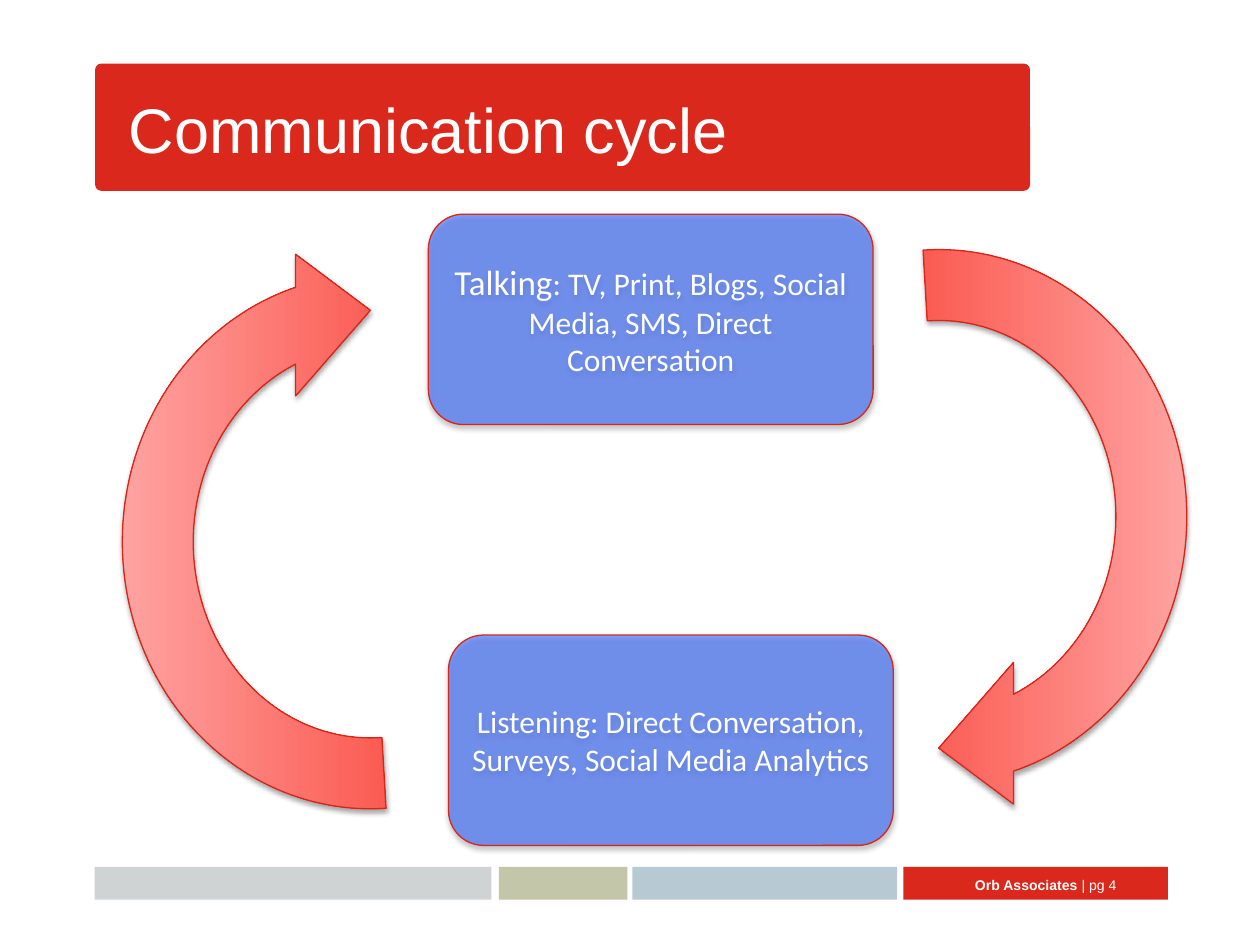
from lxml.etree import SubElement
from pptx import Presentation
from pptx.dml.color import RGBColor
from pptx.enum.shapes import MSO_SHAPE
from pptx.enum.text import MSO_ANCHOR, PP_ALIGN
from pptx.oxml.ns import qn
from pptx.util import Inches, Pt

COLORS = {
    "red": "DA291C", "outline": "DA2417", "grey": "D0D3D4", "olive": "C3C6A8",
    "sky": "B7C9D3", "blue": "3366FF", "deep": "F61100", "pale": "FFADAC",
    "white": "FFFFFF", "black": "000000",
}

# Content: text runs are (text, size, bold)
TITLE = [("Communication cycle", 36, False)]
FOOTER = [("Orb Associates ", 8, True), ("| pg 4", 8, False)]
STEPS = [  # left, top, runs
    (3.4, 1.7, [("Talking", 20, False),
                (": TV, Print, Blogs, Social Media, SMS, Direct Conversation", 18, False)]),
    (3.56, 5.04, [("Listening: Direct Conversation, Surveys, Social Media Analytics",
                   18, False)]),
]
ARROWS = [(5.05, 1.85, 90), (0.54, 2.05, 270)]  # left, top, rotation
FOOTER_BARS = [(0.75, 3.15, "grey"), (3.96, 1.02, "olive"),
               (5.02, 2.1, "sky"), (7.17, 2.1, "red")]  # left, width, colour

STEP_SIZE = (3.53, 1.67)
ARROW_SIZE = (4.8, 4.5)
ARROW_ADJ = (0.125, 11.423, 204.577, 105.983, 0.125)
BAR_TOP, BAR_HEIGHT = 6.88, 0.26


def rgb(name):
    return RGBColor.from_string(COLORS[name])


def write(shape, runs, font="Arial", color="white", align=PP_ALIGN.LEFT):
    tf = shape.text_frame
    tf.word_wrap = True
    tf.vertical_anchor = MSO_ANCHOR.MIDDLE
    p = tf.paragraphs[0]
    p.alignment = align
    for text, size, bold in runs:
        r = p.add_run()
        r.text = text
        r.font.name, r.font.size, r.font.bold = font, Pt(size), bold
        r.font.color.rgb = rgb(color)


def add_shape(s, kind, left, top, width, height, fill=None, line=None, adj=()):
    sp = s.shapes.add_shape(kind, *map(Inches, (left, top, width, height)))
    sp.shadow.inherit = False
    for i, value in enumerate(adj):
        sp.adjustments[i] = value
    if fill:
        sp.fill.solid()
        sp.fill.fore_color.rgb = rgb(fill)
    if line:
        sp.line.color.rgb = rgb(line)
        sp.line.width = Pt(0.75)
    else:
        sp.line.fill.background()
    return sp


def set_alpha(color_el, percent):
    SubElement(color_el, qn("a:alpha"), val=str(percent * 1000))


def add_shadow(sp):
    effects = sp.element.spPr.find(qn("a:effectLst"))
    shadow = SubElement(effects, qn("a:outerShdw"), blurRad=str(Pt(3.1)),
                        dist=str(Pt(1.8)), dir="5400000", rotWithShape="0")
    set_alpha(SubElement(shadow, qn("a:srgbClr"), val=COLORS["black"]), 35)


def main():
    prs = Presentation()
    prs.slide_width, prs.slide_height = Inches(10), Inches(7.5)
    s = prs.slides.add_slide(prs.slide_layouts[5])

    # Title on its red band
    title = s.shapes.title
    title.left, title.top, title.width, title.height = map(Inches, (0.78, 0.51, 7.38, 1.01))
    write(title, TITLE)
    title.text_frame.margin_left = Inches(0.24)
    band = add_shape(s, MSO_SHAPE.ROUNDED_RECTANGLE, 0.76, 0.51, 7.41, 1,
                     fill="red", line="red", adj=[0.045])
    title.element.addprevious(band.element)

    # Footer bars and page label
    for left, width, color in FOOTER_BARS:
        add_shape(s, MSO_SHAPE.ROUNDED_RECTANGLE, left, BAR_TOP, width, BAR_HEIGHT,
                  fill=color, adj=[0])
    label = s.shapes.add_textbox(*map(Inches, (6.63, 6.82, 2.33, 0.4)))
    write(label, FOOTER, align=PP_ALIGN.RIGHT)

    # Circular arrows
    for left, top, rotation in ARROWS:
        arrow = add_shape(s, MSO_SHAPE.CIRCULAR_ARROW, left, top, *ARROW_SIZE,
                          line="outline", adj=ARROW_ADJ)
        arrow.rotation = rotation
        arrow.fill.gradient()
        arrow.fill.gradient_angle = 90
        for stop, position, color in zip(arrow.fill.gradient_stops, (0, 1), ("deep", "pale")):
            stop.position = position
            stop.color.rgb = rgb(color)
        add_shadow(arrow)

    # Steps of the cycle
    for left, top, runs in STEPS:
        box = add_shape(s, MSO_SHAPE.ROUNDED_RECTANGLE, left, top, *STEP_SIZE,
                        fill="blue", line="outline")
        set_alpha(box.element.spPr.find(qn("a:solidFill"))[0], 60)
        add_shadow(box)
        write(box, runs, font="Calibri", align=PP_ALIGN.CENTER)

    prs.save("out.pptx")


if __name__ == "__main__":
    main()
